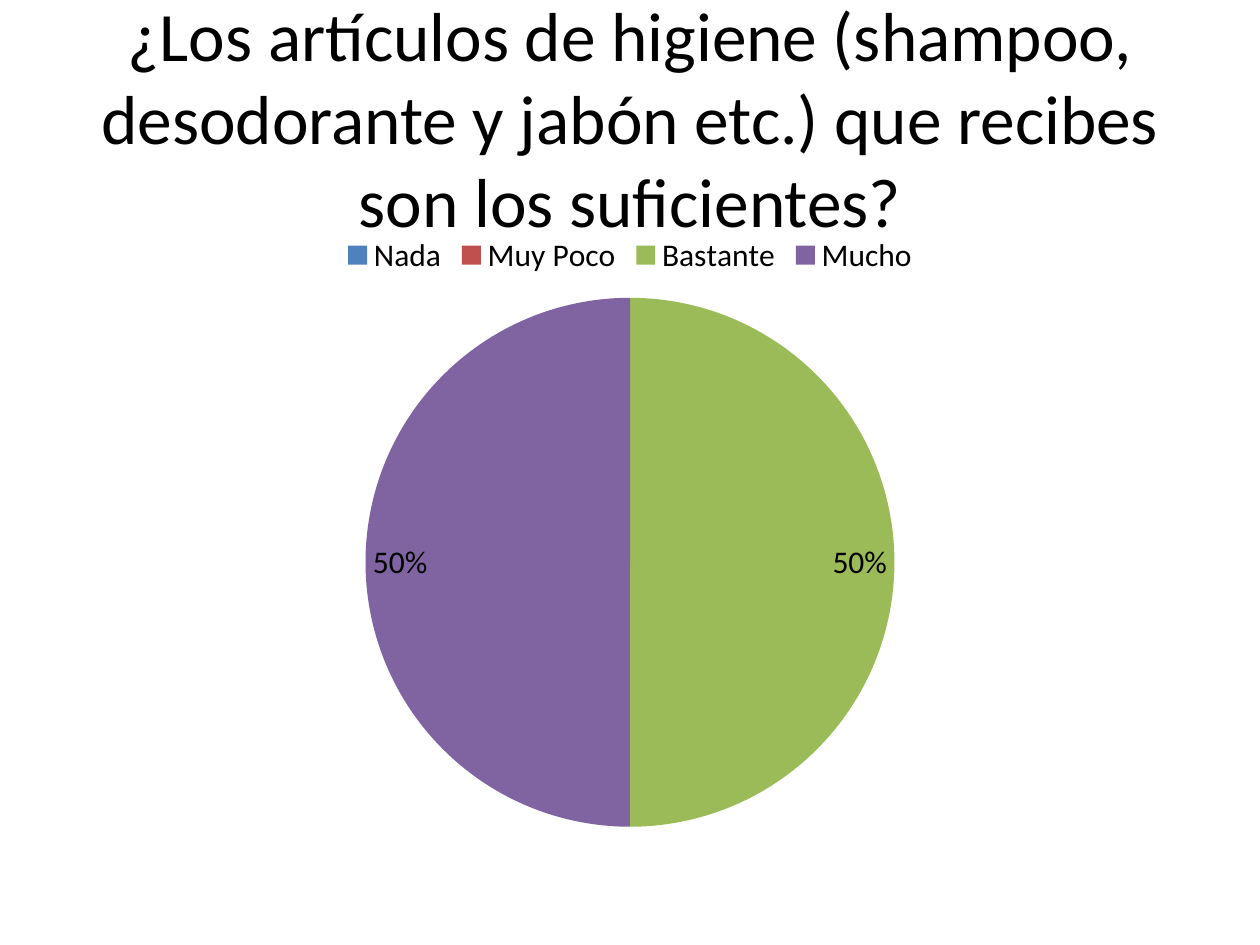
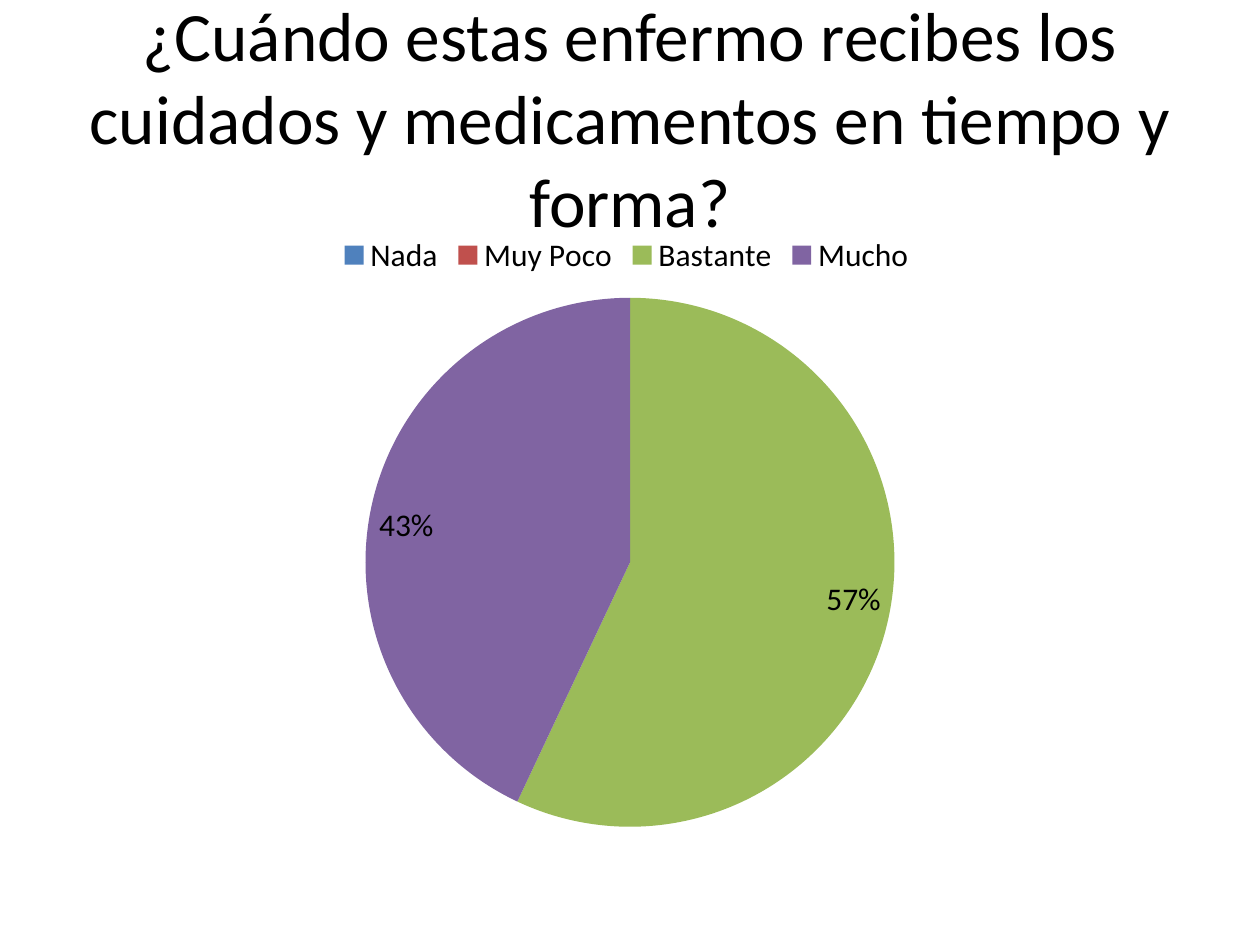
from lxml.etree import SubElement
from pptx import Presentation
from pptx.chart.data import CategoryChartData
from pptx.dml.color import RGBColor
from pptx.enum.chart import XL_CHART_TYPE, XL_LABEL_POSITION, XL_LEGEND_POSITION
from pptx.enum.text import MSO_ANCHOR, MSO_AUTO_SIZE, PP_ALIGN
from pptx.oxml.ns import qn
from pptx.util import Pt

FONT = "Calibri"
BLACK = RGBColor(0x00, 0x00, 0x00)
WHITE = RGBColor(0xFF, 0xFF, 0xFF)
BLUE = RGBColor(0x4F, 0x81, 0xBD)
RED = RGBColor(0xC0, 0x50, 0x4D)
GREEN = RGBColor(0x9B, 0xBB, 0x59)
PURPLE = RGBColor(0x80, 0x64, 0xA2)
SLICE_COLORS = (BLUE, RED, GREEN, PURPLE)

MARGIN = Pt(36)
CONTENT_WIDTH = Pt(648)

QUESTIONS = (
    ("¿Los artículos de higiene (shampoo, desodorante y jabón etc.) que recibes son los suficientes?",
     {"Nada": 0, "Muy Poco": 0, "Bastante": 50, "Mucho": 50}),
    ("¿Cuándo estas enfermo recibes los cuidados y medicamentos en tiempo y forma?",
     {"Nada": 0, "Muy Poco": 0, "Bastante": 57, "Mucho ": 43}),
)


def format_font(font, size, color=BLACK):
    """Apply the deck typeface with a size and colour."""
    font.name = FONT
    font.size = Pt(size)
    font.color.rgb = color


def write_text(frame, text, size=39.6, color=BLACK, align=PP_ALIGN.CENTER):
    """Write one formatted paragraph into a text frame."""
    frame.word_wrap = True
    frame.auto_size = MSO_AUTO_SIZE.NONE
    frame.vertical_anchor = MSO_ANCHOR.MIDDLE
    para = frame.paragraphs[0]
    para.alignment = align
    span = para.add_run()
    span.text = text
    format_font(span.font, size, color)


def add_title(page, text):
    """Place the question in the title placeholder."""
    title = page.shapes.title
    title.left, title.top = MARGIN, Pt(21.6)
    title.width, title.height = CONTENT_WIDTH, Pt(90)
    write_text(title.text_frame, text)


def hide_label(labels, index):
    """Remove the data label of one slice."""
    label = labels._element._insert_dLbl_in_sequence(index)
    for child in list(label)[1:]:
        label.remove(child)
    SubElement(label, qn("c:delete")).set("val", "1")


def add_pie(page, answers):
    """Draw the share of each answer as a pie with percentages."""
    data = CategoryChartData()
    data.categories = list(answers)
    data.add_series("Series 1", list(answers.values()))
    chart = page.shapes.add_chart(
        XL_CHART_TYPE.PIE, MARGIN, Pt(126), CONTENT_WIDTH, Pt(356.4), data).chart
    format_font(chart.font, 18)
    chart.has_title = False
    chart.has_legend = True
    chart.legend.position = XL_LEGEND_POSITION.TOP
    chart.legend.include_in_layout = False
    plot = chart.plots[0]
    plot.vary_by_categories = True
    series = plot.series[0]
    labels = series.data_labels
    labels.show_percentage = True
    labels.show_value = False
    labels.number_format = "0%"
    labels.number_format_is_linked = False
    labels.position = XL_LABEL_POSITION.INSIDE_END
    for index, (color, value) in enumerate(zip(SLICE_COLORS, answers.values())):
        fill = series.points[index].format.fill
        fill.solid()
        fill.fore_color.rgb = color
        if value == 0:
            hide_label(labels, index)


def add_question(deck, question, answers):
    """Add one survey question with its chart."""
    page = deck.slides.add_slide(deck.slide_layouts[5])
    page.background.fill.solid()
    page.background.fill.fore_color.rgb = WHITE
    add_title(page, question)
    add_pie(page, answers)


def main():
    """Build and save the survey deck."""
    deck = Presentation()
    deck.slide_width, deck.slide_height = Pt(720), Pt(540)
    for question, answers in QUESTIONS:
        add_question(deck, question, answers)
    deck.save("out.pptx")


if __name__ == "__main__":
    main()
